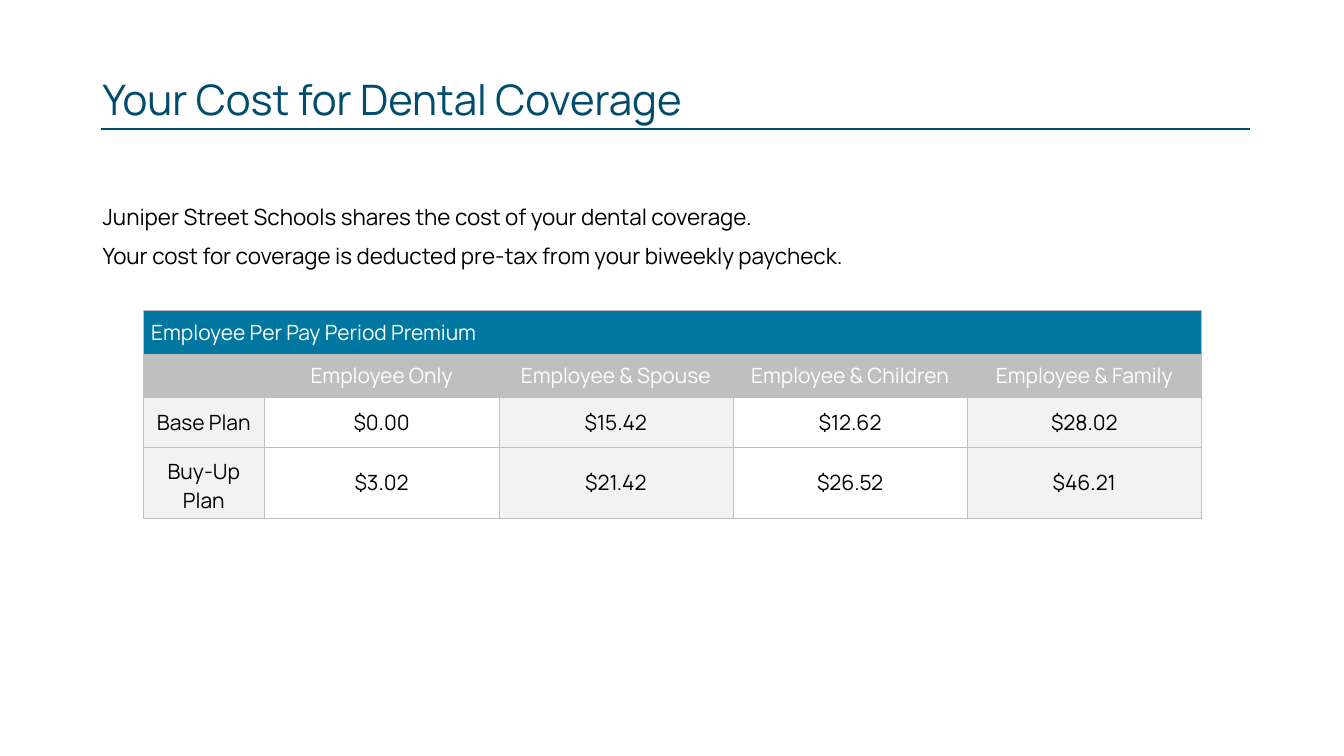
import pptx
import pptx.dml.color
import pptx.enum.shapes
import pptx.enum.text
import pptx.oxml.ns
import pptx.util
from lxml import etree

NAVY = pptx.dml.color.RGBColor(0x00, 0x4C, 0x6C)
BLUE = pptx.dml.color.RGBColor(0x00, 0x77, 0xA0)
SILVER = pptx.dml.color.RGBColor(0xBF, 0xBF, 0xBF)
PALE = pptx.dml.color.RGBColor(0xF2, 0xF2, 0xF2)
WHITE = pptx.dml.color.RGBColor(0xFF, 0xFF, 0xFF)
BLACK = pptx.dml.color.RGBColor(0x00, 0x00, 0x00)

LEFT = pptx.enum.text.PP_ALIGN.LEFT
CENTER = pptx.enum.text.PP_ALIGN.CENTER
MIDDLE = pptx.enum.text.MSO_ANCHOR.MIDDLE
TOP = pptx.enum.text.MSO_ANCHOR.TOP

TABLE_TITLE = "Employee Per Pay Period Premium"
TIERS = ["", "Employee Only", "Employee & Spouse", "Employee & Children", "Employee & Family"]
PLANS = [
    ["Base Plan", "$0.00", "$15.42", "$12.62", "$28.02"],
    ["Buy-Up Plan", "$3.02", "$21.42", "$26.52", "$46.21"],
]


class SlideBuilder:
    font_name = "Manrope"
    table_size = 15
    border_width = 0.25

    def __init__(self, presentation):
        self.width = presentation.slide_width
        self.height = presentation.slide_height
        self.slide = presentation.slides.add_slide(presentation.slide_layouts[6])

    def across(self, percent):
        return round(self.width * percent / 100)

    def down(self, percent):
        return round(self.height * percent / 100)

    def add_run(self, paragraph, text, size, color):
        run = paragraph.add_run()
        run.text = text
        run.font.name = self.font_name
        run.font.size = pptx.util.Pt(size)
        run.font.color.rgb = color

    def rule(self, left, right, top, color, width):
        connector = self.slide.shapes.add_connector(
            pptx.enum.shapes.MSO_CONNECTOR.STRAIGHT,
            self.across(left), self.down(top), self.across(right), self.down(top))
        connector.line.color.rgb = color
        connector.line.width = pptx.util.Pt(width)
        etree.SubElement(connector._element.spPr, pptx.oxml.ns.qn("a:effectLst"))

    def text(self, left, top, width, height, lines, size, color, anchor=TOP, gap=0):
        shape = self.slide.shapes.add_textbox(
            self.across(left), self.down(top), self.across(width), self.down(height))
        frame = shape.text_frame
        frame.word_wrap = True
        frame.vertical_anchor = anchor
        for index, line in enumerate(lines):
            paragraph = frame.add_paragraph() if index else frame.paragraphs[0]
            paragraph.line_spacing = 0.9
            if index:
                paragraph.space_before = pptx.util.Pt(gap)
            self.add_run(paragraph, line, size, color)

    def table(self, left, top, columns, rows):
        shape = self.slide.shapes.add_table(
            len(rows), len(columns), self.across(left), self.down(top),
            self.across(sum(columns)), self.down(sum(rows)))
        table = shape.table
        table.first_row = False
        table.horz_banding = False
        for column, width in zip(table.columns, columns):
            column.width = self.across(width)
        for row, height in zip(table.rows, rows):
            row.height = self.down(height)
        return table

    def borders(self, cell):
        properties = cell._tc.get_or_add_tcPr()
        for side in ("a:lnL", "a:lnR", "a:lnT", "a:lnB"):
            line = etree.SubElement(properties, pptx.oxml.ns.qn(side))
            line.set("w", str(pptx.util.Pt(self.border_width)))
            fill = etree.SubElement(line, pptx.oxml.ns.qn("a:solidFill"))
            etree.SubElement(fill, pptx.oxml.ns.qn("a:srgbClr")).set("val", str(SILVER))

    def cell(self, cell, text, fill, color, insets, alignment=CENTER):
        self.borders(cell)
        cell.fill.solid()
        cell.fill.fore_color.rgb = fill
        cell.vertical_anchor = MIDDLE
        horizontal, vertical = (pptx.util.Inches(inset) for inset in insets)
        cell.margin_left = cell.margin_right = horizontal
        cell.margin_top = cell.margin_bottom = vertical
        paragraph = cell.text_frame.paragraphs[0]
        paragraph.alignment = alignment
        if text:
            self.add_run(paragraph, text, self.table_size, color)


def main():
    presentation = pptx.Presentation()
    presentation.slide_width = pptx.util.Inches(13.33)
    presentation.slide_height = pptx.util.Inches(7.5)
    builder = SlideBuilder(presentation)

    builder.rule(7.5, 93.02, 17.07, NAVY, 1.5)
    builder.text(6.9, 26.67, 86.27, 63.47, [
        "Juniper Street Schools shares the cost of your dental coverage.",
        "Your cost for coverage is deducted pre-tax from your biweekly paycheck.",
    ], 16, BLACK, gap=10)
    builder.text(6.9, 9.87, 86.27, 7.2, ["Your Cost for Dental Coverage"], 30, NAVY, MIDDLE)

    premiums = builder.table(10.65, 41.07, [9.03] + [17.43] * 4, [5.73, 5.73, 6.67, 6.67])
    for column, tier in enumerate(TIERS):
        title = "" if column else TABLE_TITLE
        builder.cell(premiums.cell(0, column), title, BLUE, WHITE, (0.08, 0.04), LEFT)
        builder.cell(premiums.cell(1, column), tier, SILVER, WHITE, (0.09, 0))
        for row, plan in enumerate(PLANS, start=2):
            fill = WHITE if column % 2 else PALE
            builder.cell(premiums.cell(row, column), plan[column], fill, BLACK, (0.1, 0.1))
    premiums.cell(0, 0).merge(premiums.cell(0, len(TIERS) - 1))

    presentation.save("out.pptx")


if __name__ == "__main__":
    main()
